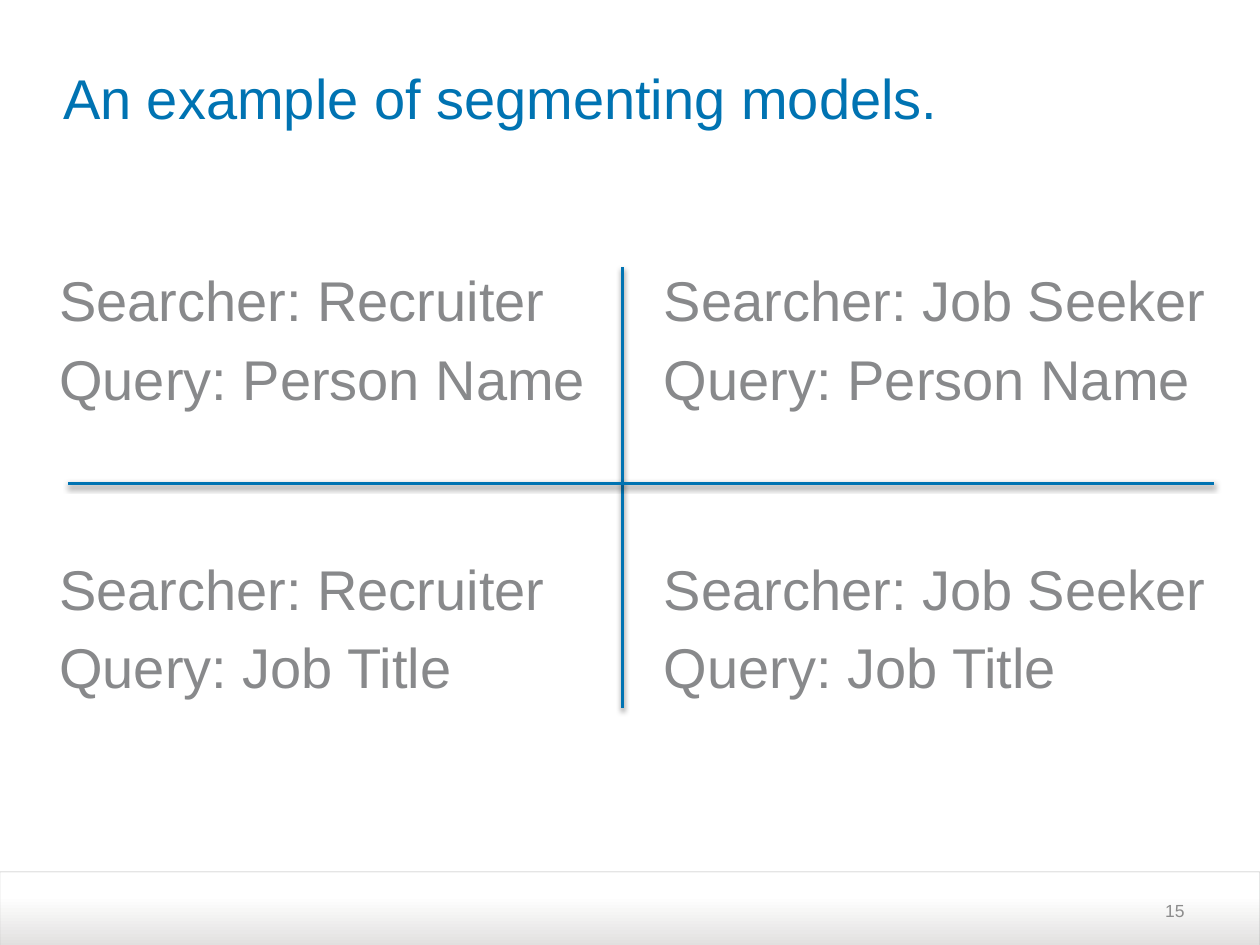
import pptx
import pptx.util
import pptx.oxml
import pptx.oxml.ns
import pptx.dml.color
import pptx.enum.shapes
import pptx.enum.text
import lxml.etree

Pt = pptx.util.Pt
ANCHOR = pptx.enum.text.MSO_ANCHOR
ALIGN = pptx.enum.text.PP_ALIGN

HEADING = "An example of segmenting models."
PAGE_NUMBER = "15"
SEARCHERS = ["Recruiter", "Job Seeker"]
QUERIES = ["Person Name", "Job Title"]

COLORS = {
    "accent": "0073B2",
    "segment": "88898B",
    "number": "8C8C8C",
    "band": "E1E0DF",
    "white": "FFFFFF",
    "edge": "A6A6A6",
    "shadow": "000000",
}
COLUMN_LEFTS = [33.84, 379.44]
ROW_TOPS = [148.32, 313.2]
SEGMENT_SIZE = (316, 95.76)
AXES = [(355.68, 152.64, 355.68, 404.64), (38.88, 276.2, 693.8, 276.2)]


def rgb(name):
    return pptx.dml.color.RGBColor.from_string(COLORS[name])


def write(shape, lines, size, color, frame_format, paragraph_format, gap=0):
    frame = shape.text_frame
    for key, value in frame_format.items():
        setattr(frame, key, value)
    for index, line in enumerate(lines):
        paragraph = frame.paragraphs[0] if index == 0 else frame.add_paragraph()
        for key, value in paragraph_format.items():
            setattr(paragraph, key, value)
        if index:
            paragraph.space_before = Pt(gap)
        run = paragraph.add_run()
        run.text = line
        for key, value in {"name": "Arial", "size": Pt(size)}.items():
            setattr(run.font, key, value)
        run.font.color.rgb = rgb(color)


def add_band(slide):
    band = slide.shapes.add_shape(
        pptx.enum.shapes.MSO_SHAPE.ROUND_2_SAME_RECTANGLE,
        Pt(0), Pt(498.24), Pt(720), Pt(42.48))
    band.adjustments[0] = 0
    band.shadow.inherit = False
    band.fill.gradient()
    band.fill.gradient_angle = 90
    for stop, (position, color) in zip(
            band.fill.gradient_stops, [(0, "band"), (0.68, "white")]):
        stop.position = position
        stop.color.rgb = rgb(color)
    band.line.width = Pt(0.25)
    band.line.color.rgb = rgb("edge")
    edge = band.line.fill._xPr.find(".//" + pptx.oxml.ns.qn("a:srgbClr"))
    lxml.etree.SubElement(edge, pptx.oxml.ns.qn("a:alpha"), val="79000")
    slide.shapes._spTree.remove(band._element)
    slide.shapes._spTree.insert(2, band._element)


def add_axis(slide, ends):
    axis = slide.shapes.add_connector(
        pptx.enum.shapes.MSO_CONNECTOR.STRAIGHT, *map(Pt, ends))
    axis.line.width = Pt(2)
    axis.line.color.rgb = rgb("accent")
    axis._element.spPr.append(pptx.oxml.parse_xml(
        f'<a:effectLst {pptx.oxml.ns.nsdecls("a")}>'
        f'<a:outerShdw blurRad="{Pt(3.1)}" dist="{Pt(1.6)}" dir="5400000" rotWithShape="0">'
        f'<a:srgbClr val="{COLORS["shadow"]}"><a:alpha val="38000"/></a:srgbClr>'
        '</a:outerShdw></a:effectLst>'))


def main():
    deck = pptx.Presentation()
    deck.slide_width, deck.slide_height = Pt(720), Pt(540)
    slide = deck.slides.add_slide(deck.slide_layouts[5])
    add_band(slide)

    heading = slide.shapes.title
    for key, value in {"left": 36, "top": 15.84, "width": 648, "height": 79.2}.items():
        setattr(heading, key, Pt(value))
    write(heading, [HEADING], 32, "accent",
          {"margin_left": 0, "margin_right": 0, "vertical_anchor": ANCHOR.MIDDLE},
          {"alignment": ALIGN.LEFT})

    number = slide.shapes.add_textbox(Pt(516.24), Pt(505.8), Pt(167.76), Pt(28.8))
    write(number, [PAGE_NUMBER], 10, "number",
          {"word_wrap": True, "vertical_anchor": ANCHOR.MIDDLE},
          {"alignment": ALIGN.RIGHT})

    for top, query in zip(ROW_TOPS, QUERIES):
        for left, searcher in zip(COLUMN_LEFTS, SEARCHERS):
            segment = slide.shapes.add_textbox(
                Pt(left), Pt(top), *map(Pt, SEGMENT_SIZE))
            write(segment, [f"Searcher: {searcher}", f"Query: {query}"], 32, "segment",
                  {"margin_left": 0, "margin_right": 0, "word_wrap": True},
                  {"alignment": ALIGN.LEFT}, gap=6.4)

    for ends in AXES:
        add_axis(slide, ends)
    deck.save("out.pptx")


if __name__ == "__main__":
    main()
